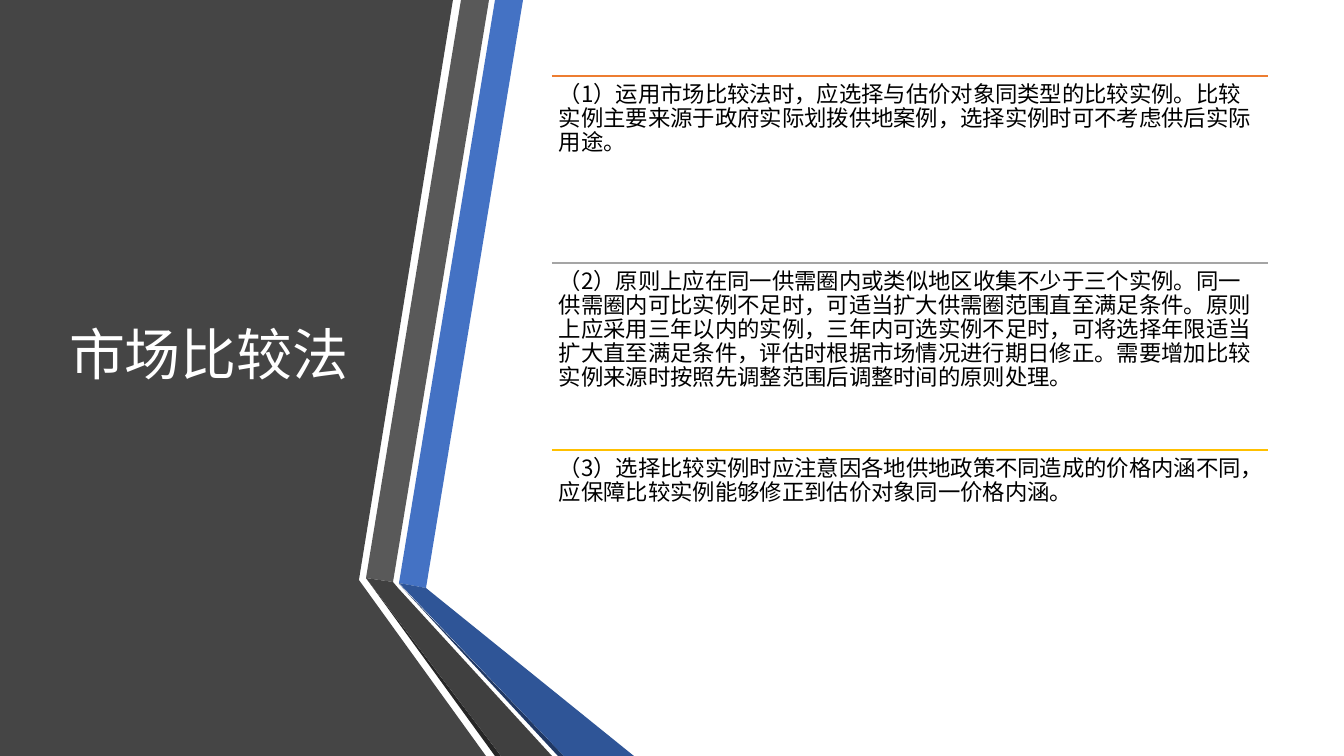
from lxml import etree
from pptx import Presentation
from pptx.dml.color import RGBColor
from pptx.enum.shapes import MSO_CONNECTOR
from pptx.enum.text import MSO_ANCHOR
from pptx.oxml.ns import qn
from pptx.util import Pt

STRAIGHT = MSO_CONNECTOR.STRAIGHT
TOP, MIDDLE = MSO_ANCHOR.TOP, MSO_ANCHOR.MIDDLE

FONT = "Noto Sans CJK SC"
WHITE = RGBColor(0xFF, 0xFF, 0xFF)
BLACK = RGBColor(0x00, 0x00, 0x00)
CHARCOAL = RGBColor(0x45, 0x45, 0x45)
GRAY = RGBColor(0x59, 0x59, 0x59)
DARK_GRAY = RGBColor(0x40, 0x40, 0x40)
DEEP_GRAY = RGBColor(0x26, 0x26, 0x26)
BLUE = RGBColor(0x44, 0x72, 0xC4)
DARK_BLUE = RGBColor(0x2F, 0x55, 0x97)
NAVY = RGBColor(0x20, 0x38, 0x64)
ORANGE = RGBColor(0xED, 0x7D, 0x31)
SILVER = RGBColor(0xA5, 0xA5, 0xA5)
GOLD = RGBColor(0xFF, 0xC0, 0x00)

TITLE = "市场比较法"
RULES = [
    (ORANGE, "（1）运用市场比较法时，应选择与估价对象同类型的比较实例。"
             "比较实例主要来源于政府实际划拨供地案例，选择实例时可不考虑供后实际用途。"),
    (SILVER, "（2）原则上应在同一供需圈内或类似地区收集不少于三个实例。"
             "同一供需圈内可比实例不足时，可适当扩大供需圈范围直至满足条件。"
             "原则上应采用三年以内的实例，三年内可选实例不足时，可将选择年限适当扩大直至满足条件，"
             "评估时根据市场情况进行期日修正。"
             "需要增加比较实例来源时按照先调整范围后调整时间的原则处理。"),
    (GOLD, "（3）选择比较实例时应注意因各地供地政策不同造成的价格内涵不同，"
           "应保障比较实例能够修正到估价对象同一价格内涵。"),
]

# Lengths in px
EMU_PER_PX = 914400 / 100.8
SLIDE_WIDTH, SLIDE_HEIGHT = 1344, 756
TITLE_BOX = (59, 76, 306, 562)
RULE_LEFT, RULE_TOP, RULE_WIDTH, RULE_HEIGHT = 552, 76, 716, 187
TITLE_INSET, RULE_INSET = 10, 7

PANELS = [
    (CHARCOAL, [(0, 0), (453, 0), (359, 580), (486, 756), (0, 756)]),
    (BLUE, [(399, 583), (426, 588), (523, 0), (495, 0)]),
    (GRAY, [(489, 0), (461, 0), (366, 578), (393, 582)]),
    (DEEP_GRAY, [(366, 578), (495, 756), (501, 756)]),
    (NAVY, [(399, 584), (558, 756), (564, 756)]),
    (DARK_BLUE, [(399, 583), (564, 756), (634, 756), (426, 588)]),
    (DARK_GRAY, [(366, 578), (501, 756), (552, 756), (398, 588), (393, 582)]),
]


def px(length):
    return round(length * EMU_PER_PX)


def add_panel(slide, color, points):
    builder = slide.shapes.build_freeform(*points[0], scale=EMU_PER_PX)
    builder.add_line_segments(points[1:], close=True)
    shape = builder.convert_to_shape()
    shape.shadow.inherit = False
    shape.fill.solid()
    shape.fill.fore_color.rgb = color
    shape.line.fill.background()


def add_text(slide, box, text, size, color, inset, anchor):
    frame = slide.shapes.add_textbox(*map(px, box)).text_frame
    frame.word_wrap = True
    frame.vertical_anchor = anchor
    frame.margin_left = frame.margin_right = px(inset)
    frame.margin_top = frame.margin_bottom = px(RULE_INSET)
    paragraph = frame.paragraphs[0]
    paragraph.text = text
    paragraph.line_spacing = 0.9
    font = paragraph.font
    font.size = Pt(size)
    font.color.rgb = color
    font.name = FONT
    properties = paragraph._p.pPr.find(qn("a:defRPr"))
    etree.SubElement(properties, qn("a:ea"), typeface=FONT)


def add_divider(slide, top, color):
    line = slide.shapes.add_connector(
        STRAIGHT, px(RULE_LEFT), px(top), px(RULE_LEFT + RULE_WIDTH), px(top))
    line.line.color.rgb = color
    line.line.width = Pt(1)
    etree.SubElement(line._element.spPr, qn("a:effectLst"))


def main():
    presentation = Presentation()
    presentation.slide_width = px(SLIDE_WIDTH)
    presentation.slide_height = px(SLIDE_HEIGHT)
    slide = presentation.slides.add_slide(presentation.slide_layouts[6])

    for color, points in PANELS:
        add_panel(slide, color, points)
    add_text(slide, TITLE_BOX, TITLE, 40, WHITE, TITLE_INSET, MIDDLE)
    for index, (color, text) in enumerate(RULES):
        top = RULE_TOP + index * RULE_HEIGHT
        add_divider(slide, top, color)
        box = (RULE_LEFT, top, RULE_WIDTH, RULE_HEIGHT)
        add_text(slide, box, text, 16, BLACK, RULE_INSET, TOP)

    presentation.save("out.pptx")


if __name__ == "__main__":
    main()
